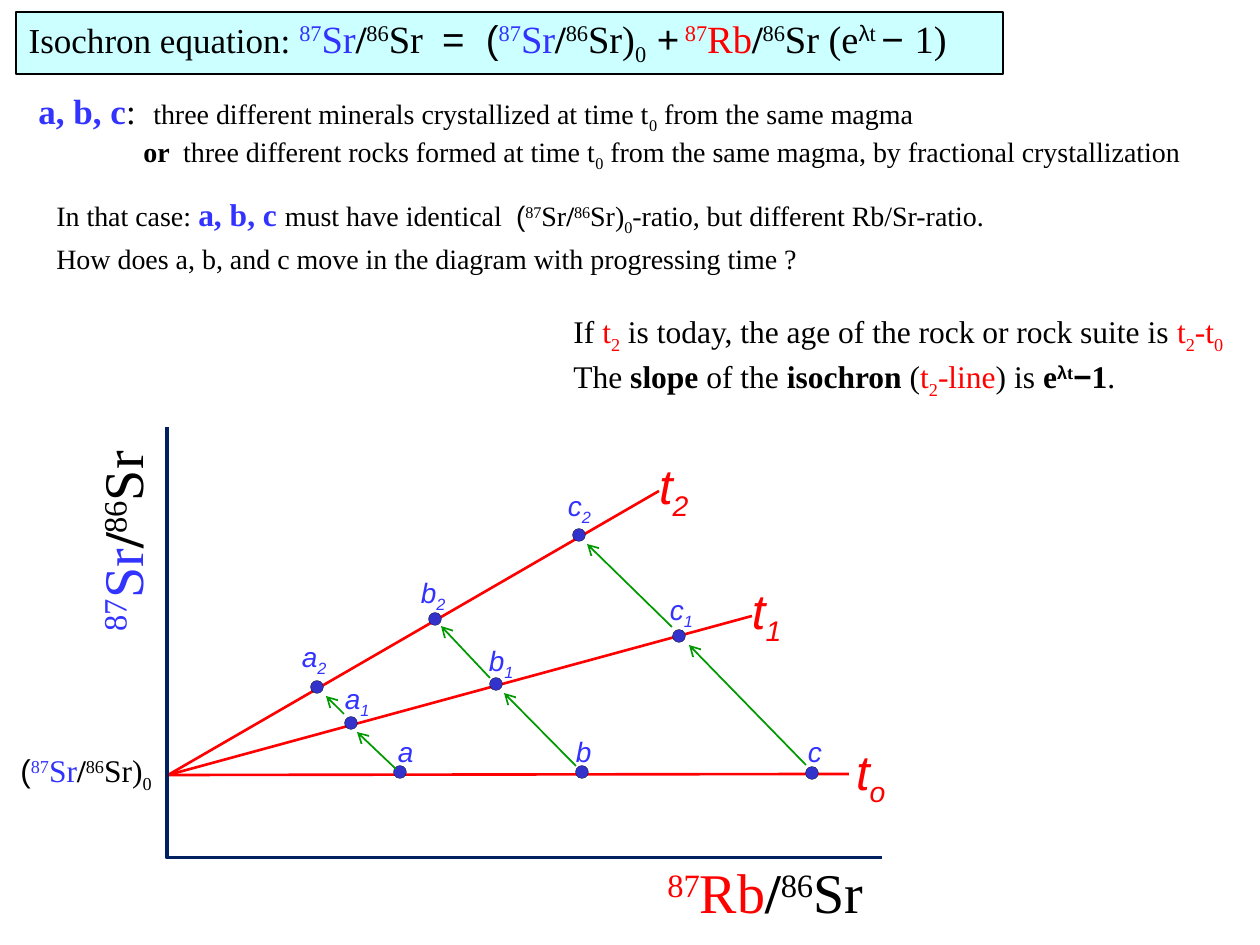
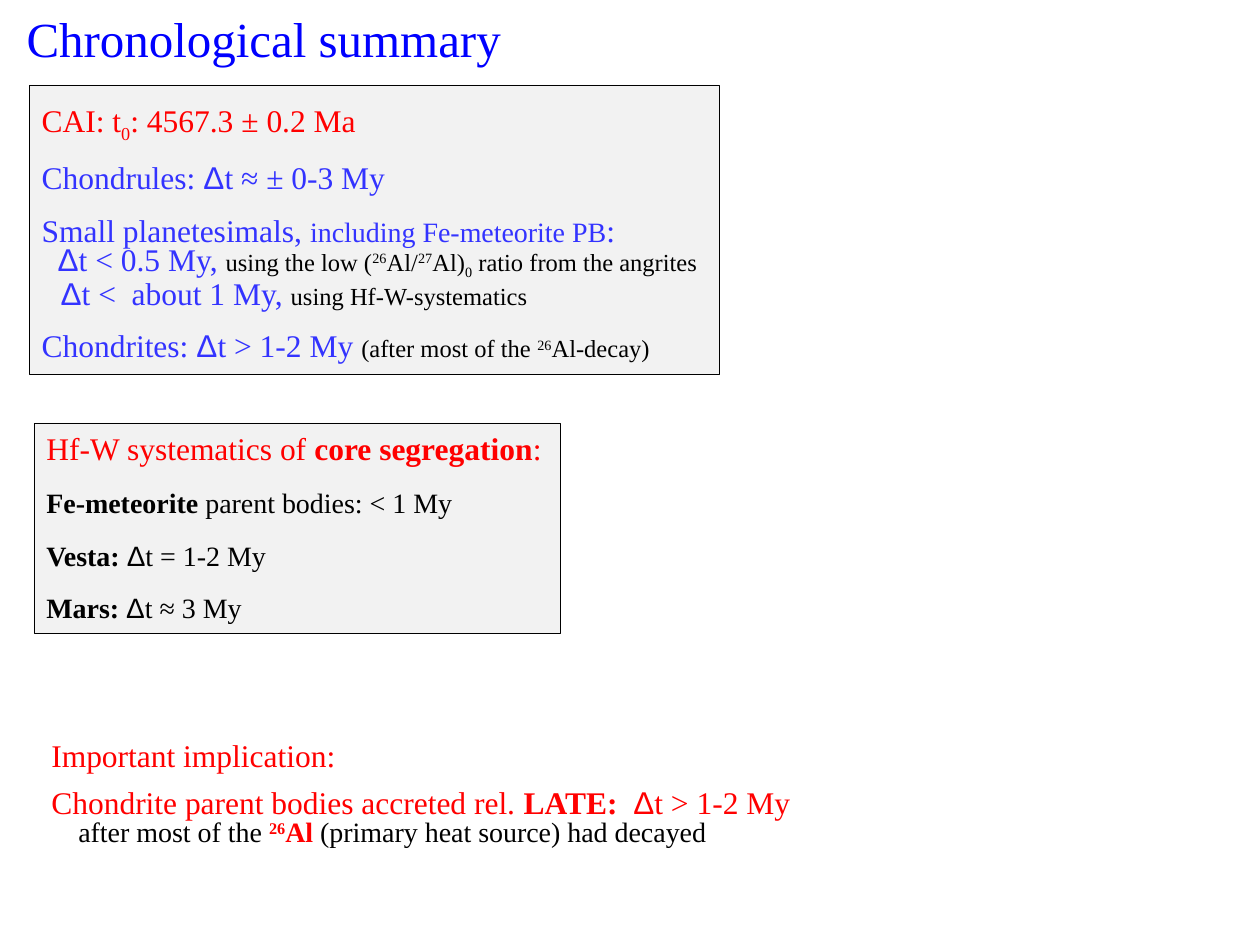
from lxml.etree import SubElement
from pptx import Presentation
from pptx.dml.color import RGBColor
from pptx.enum.shapes import MSO_CONNECTOR, MSO_SHAPE
from pptx.enum.text import MSO_ANCHOR, MSO_AUTO_SIZE, PP_ALIGN
from pptx.oxml.ns import qn
from pptx.util import Emu, Pt

PX = 914400 / 126
SERIF, SANS = "Times New Roman", "Arial"
COLORS = {
    "black": "000000", "red": "FF0000", "blue": "3333FF", "title": "0000FF",
    "dot": "3333CC", "green": "009900", "axis": "002060",
    "equation": "CCFFFF", "panel": "F2F2F2",
}
STYLES = {
    "b": {"bold": True},
    "i": {"italic": True},
    "sans": {"name": SANS},
    "sup": {"baseline": 30000},
    "sub": {"baseline": -25000},
}

ORIGIN = (168, 775)
# subscript, end of the line, place of the label
TIME_LINES = [
    ("o", (849, 774), (856, 741)),
    ("1", (752, 616), (752, 580)),
    ("2", (659, 491), (659, 455)),
]
# for each mineral: dot centres and label places at t0, t1, t2, then the arrows
MINERALS = {
    "a": ([(400, 772), (351, 723), (317, 687)],
          [(398, 735), (345, 682), (302, 640)],
          [((396, 769), (357, 732)), ((344, 714), (326, 696))]),
    "b": ([(582, 772), (496, 684), (435, 619)],
          [(576, 735), (489, 644), (421, 576)],
          [((576, 766), (504, 693)), ((490, 678), (441, 626))]),
    "c": ([(812, 773), (679, 636), (579, 535)],
          [(808, 735), (670, 593), (568, 489)],
          [((806, 765), (689, 645)), ((672, 627), (587, 544))]),
}


def px(*lengths):
    return [Emu(round(n * PX)) for n in lengths]


def rgb(name):
    return RGBColor.from_string(COLORS[name])


def para(*runs, ls=1.0, indent=0):
    """Describe a paragraph; a run is a string or (string, style words)."""
    return {"runs": runs, "ls": ls, "indent": indent}


def ratio(element, color="black", mass="87", end="Sr"):
    """Runs for the ratio of an isotope over 86Sr."""
    return [(mass, f"{color} sup"), (element, color),
            ("/", "b"), ("86", "sup"), end]


def add_run(p, text, words, size):
    fmt = {"name": SERIF, "size": size, "bold": False, "italic": False}
    color = "black"
    for word in words.split():
        if word in COLORS:
            color = word
        elif word in STYLES:
            fmt.update(STYLES[word])
        else:
            fmt["size"] = int(word)
    r = p.add_run()
    r.text = text
    baseline = fmt.pop("baseline", None)
    if baseline:
        r._r.get_or_add_rPr().set("baseline", str(baseline))
    fmt["size"] = Pt(fmt["size"])
    for name, value in fmt.items():
        setattr(r.font, name, value)
    r.font.color.rgb = rgb(color)


def write(sp, paras, size, inset=True):
    """Fill a shape with text; placeholders wrap and keep their size."""
    tf = sp.text_frame
    fixed = sp.is_placeholder
    frame = {"word_wrap": fixed, "vertical_anchor": MSO_ANCHOR.TOP,
             "auto_size": MSO_AUTO_SIZE.NONE if fixed
             else MSO_AUTO_SIZE.SHAPE_TO_FIT_TEXT}
    if not inset:
        sides = ("left", "top", "right", "bottom")
        frame.update({f"margin_{side}": 0 for side in sides})
    for name, value in frame.items():
        setattr(tf, name, value)
    for i, item in enumerate(paras):
        p = tf.add_paragraph() if i else tf.paragraphs[0]
        pPr = p._p.get_or_add_pPr()
        pPr.set("marL", str(px(item["indent"])[0]))
        pPr.set("indent", "0")
        SubElement(pPr, qn("a:buNone"))
        p.alignment = PP_ALIGN.LEFT
        p.space_before = Pt(0)
        p.line_spacing = item["ls"]
        for run in item["runs"]:
            text, words = (run, "") if isinstance(run, str) else run
            add_run(p, text, words, size)


def paint(sp, fill, line, width):
    sp.shadow.inherit = False
    sp.fill.solid()
    sp.fill.fore_color.rgb = rgb(fill)
    sp.line.color.rgb = rgb(line)
    sp.line.width = Pt(width)


def place(sp, box):
    for name, value in zip(("left", "top", "width", "height"), px(*box)):
        setattr(sp, name, value)


def add_text(s, box, paras, size, rotation=0, **frame):
    sp = s.shapes.add_textbox(*px(*box))
    sp.rotation = rotation
    write(sp, paras, size, **frame)


def add_line(s, start, end, color, width, arrow=False):
    sp = s.shapes.add_connector(MSO_CONNECTOR.STRAIGHT, *px(*start, *end))
    sp.line.color.rgb = rgb(color)
    sp.line.width = Pt(width)
    if arrow:
        SubElement(sp.line._get_or_add_ln(), qn("a:tailEnd"), type="arrow")
    SubElement(sp._element.spPr, qn("a:effectLst"))


def add_dot(s, center, size=13):
    x, y = center
    sp = s.shapes.add_shape(
        MSO_SHAPE.OVAL, *px(x - size / 2, y - size / 2, size, size))
    paint(sp, "dot", "black", 0.1)


def add_label(s, at, size, color, letter, sub=""):
    """Put an italic letter, with or without a subscript, in the diagram."""
    runs = [(letter, f"sans i {color}")]
    if sub:
        runs.append((sub, f"sans i sub {color}"))
    width = 33 if size > 20 else 26 if sub else 15
    add_text(s, (*at, width, size * 2), [para(*runs)], size, inset=False)


def add_axes(s):
    builder = s.shapes.build_freeform(167, 427, scale=PX)
    builder.add_line_segments([(167, 858), (882, 858)], close=False)
    sp = builder.convert_to_shape()
    sp.shadow.inherit = False
    sp.fill.background()
    sp.line.color.rgb = rgb("axis")
    sp.line.width = Pt(1.75)


def add_isochrons(s):
    for sub, end, at in TIME_LINES:
        add_line(s, ORIGIN, end, "red", 1.5)
        add_label(s, at, 28, "red", "t", sub)
    add_axes(s)
    for letter, (centers, labels, arrows) in MINERALS.items():
        for center, at, sub in zip(centers, labels, ("", "1", "2")):
            add_dot(s, center)
            add_label(s, at, 16, "blue", letter, sub)
        for start, end in arrows:
            add_line(s, start, end, "green", 1, arrow=True)


def isochron_slide(prs):
    s = prs.slides.add_slide(prs.slide_layouts[5])
    title = s.shapes.title
    place(title, (16, 12, 987, 62))
    paint(title, "equation", "black", 0.75)
    write(title, [para(
        ("Isochron equation: ", "20"), *ratio("Sr", "blue", end="Sr  "),
        ("=  (", "sans"), *ratio("Sr", "blue", end="Sr)"), ("0", "sub"),
        (" +", "sans"), *ratio("Rb", "red", mass=" 87", end="Sr (e"),
        ("λ", "sans sup"), ("t ", "sup"), ("− ", "sans"), "1)",
        ls=Pt(28))], 22)

    add_text(s, (26, 90, 1187, 87), [
        para(("a, b, c", "blue b 20"), (":  ", "20"),
             "three different minerals crystallized at time t", ("0", "sub"),
             " from the same magma", ls=Pt(22)),
        para(("or  ", "b"), "three different rocks formed at time t",
             ("0", "sub"),
             " from the same magma, by fractional crystallization",
             ls=Pt(22), indent=105)], 16)
    add_text(s, (44, 192, 983, 91), [
        para("In that case: ", ("a, b, c ", "blue b 18"),
             "must have identical  ", ("(", "sans"),
             *ratio("Sr", end="Sr)"), ("0", "sub"),
             "-ratio, but different Rb/Sr-ratio.", ls=Pt(22)),
        para("How does a, b, and c move in the diagram with progressing "
             "time ?", ls=Pt(22))], 16)
    add_text(s, (561, 303, 685, 105), [
        para("If ", ("t", "red"), ("2", "red sub"),
             " is today, the age of the rock or rock suite is ",
             ("t", "red"), ("2", "red sub"), ("-t", "red"),
             ("0", "red sub"), ls=Pt(26)),
        para("The ", ("slope ", "b"), "of the ", ("isochron", "b"), " (",
             ("t", "red"), ("2", "red sub"), ("-line", "red"), ") is ",
             ("e", "b"), ("λ", "b sans sup"), ("t", "b sup"),
             ("−", "b sans"), ("1", "b"), ".", ls=Pt(26))], 18)

    add_isochrons(s)
    add_text(s, (655, 870, 232, 62),
             [para(*ratio("Rb", "red"), ls=Pt(28))], 32)
    add_text(s, (22, 504, 217, 62),
             [para(*ratio("Sr", "blue"), ls=Pt(28))], 32, rotation=270)
    add_text(s, (8, 739, 165, 62),
             [para(("(", "sans"), *ratio("Sr", "blue", end="Sr)"),
                   ("0", "sub"), ls=Pt(28))], 18)


def summary_slide(prs):
    s = prs.slides.add_slide(prs.slide_layouts[1])
    title, ages = s.placeholders
    place(title, (14, 14, 645, 60))
    write(title, [para(("Chronological summary", "title"), ls=0.8)], 28)

    place(ages, (29, 85, 690, 289))
    paint(ages, "panel", "black", 0.25)
    delta = ("Δ", "blue sans")
    write(ages, [
        para(("CAI: t", "red"), ("0", "red sub"),
             (": 4567.3 ± 0.2 Ma", "red"), ls=Pt(30)),
        para(("Chondrules: ", "blue"), delta, ("t ≈ ± 0-3 My", "blue"),
             ls=Pt(30)),
        para(("Small planetesimals, ", "blue"),
             ("including Fe-meteorite PB", "blue 16"), (":", "blue"),
             ls=Pt(30)),
        para(delta, ("t < 0.5 My, ", "blue"), ("using the low (", "14"),
             ("26", "14 sup"), ("Al/", "14"), ("27", "14 sup"),
             ("Al)", "14"), ("0", "14 sub"),
             (" ratio from the angrites", "14"), ls=Pt(18), indent=16),
        para(delta, ("t <  about 1 My, ", "blue"),
             ("using Hf-W-systematics", "14"), ls=Pt(18), indent=19),
        para(("Chondrites: ", "blue"), delta, ("t > 1-2 My ", "blue"),
             ("(after most of the ", "14"), ("26", "14 sup"),
             ("Al-decay)", "14"), ls=Pt(30))], 18)

    cores = s.shapes.add_shape(MSO_SHAPE.RECTANGLE, *px(34, 423, 526, 210))
    paint(cores, "panel", "black", 0.25)
    write(cores, [
        para(("Hf-W systematics of ", "red 18"),
             ("core segregation", "red b 18"), (":", "red 18")),
        para(("Fe-meteorite ", "b"), "parent bodies: < 1 My", ls=Pt(30)),
        para(("Vesta: ", "b"), ("Δ", "sans"), "t = 1-2 My", ls=Pt(30)),
        para(("Mars: ", "b"), ("Δ", "sans"), "t ≈ 3 My", ls=Pt(30))], 16)

    add_text(s, (39, 720, 769, 136), [
        para(("Important implication:", "red"), ls=1.25),
        para(("Chondrite parent bodies accreted rel. ", "red"),
             ("LATE:  ", "red b"), ("Δ", "red sans"), ("t > 1-2 My", "red"),
             ls=1.25),
        para(("after most of the ", "16"), ("26", "red b sup 16"),
             ("Al ", "red b 16"), ("(primary heat source) had decayed", "16"),
             ls=Pt(16), indent=27)], 18)


def main():
    prs = Presentation()
    prs.slide_width, prs.slide_height = px(1260, 945)
    isochron_slide(prs)
    summary_slide(prs)
    prs.save("out.pptx")


if __name__ == "__main__":
    main()
